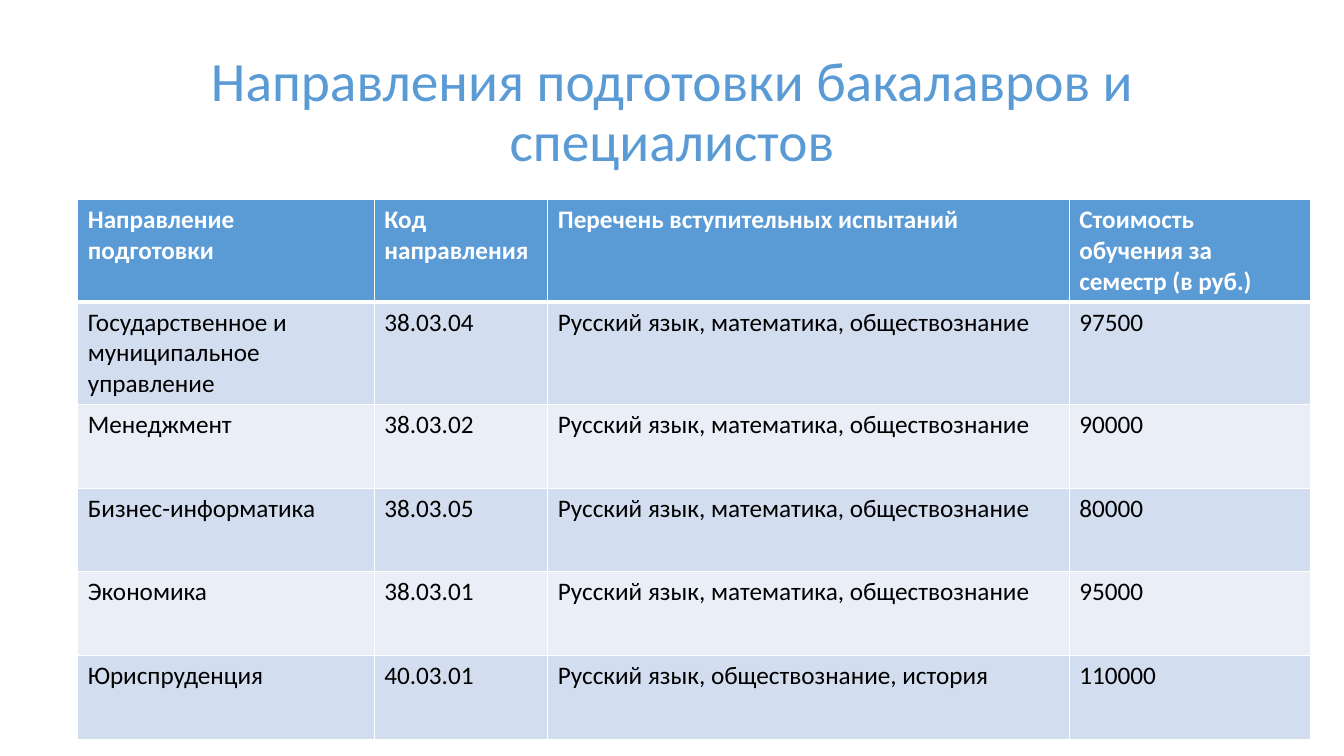
import dataclasses

import lxml.etree
import pptx
import pptx.dml.color
import pptx.enum.text
import pptx.oxml.ns
import pptx.util

Pt = pptx.util.Pt
RGBColor = pptx.dml.color.RGBColor

BLUE = RGBColor(0x5B, 0x9B, 0xD5)
DARK_BAND = RGBColor(0xD2, 0xDE, 0xEF)
LIGHT_BAND = RGBColor(0xEA, 0xEF, 0xF7)
WHITE = RGBColor(0xFF, 0xFF, 0xFF)
BLACK = RGBColor(0x00, 0x00, 0x00)

FONT = "Calibri"
COLUMN_WIDTHS = (211.8, 124, 372.4, 172.6)
ROW_HEIGHT = 59.8
HEADINGS = (
    "Направление подготовки",
    "Код направления",
    "Перечень вступительных испытаний",
    "Стоимость обучения за семестр (в руб.)",
)
MATH_EXAMS = "Русский язык, математика, обществознание"
HISTORY_EXAMS = "Русский язык, обществознание, история"


@dataclasses.dataclass(frozen=True)
class Programme:
    name: str
    code: str
    exams: str
    price: int


PROGRAMMES = (
    Programme("Государственное и муниципальное управление", "38.03.04", MATH_EXAMS, 97500),
    Programme("Менеджмент", "38.03.02", MATH_EXAMS, 90000),
    Programme("Бизнес-информатика", "38.03.05", MATH_EXAMS, 80000),
    Programme("Экономика", "38.03.01", MATH_EXAMS, 95000),
    Programme("Юриспруденция", "40.03.01", HISTORY_EXAMS, 110000),
)


def write_text(frame, text: str, *, size: float, color: RGBColor, bold: bool = False,
               align=None, line_spacing: float | None = None) -> None:
    para = frame.paragraphs[0]
    para.alignment = align
    para.line_spacing = line_spacing
    span = para.add_run()
    span.text = text
    span.font.name = FONT
    span.font.size = Pt(size)
    span.font.bold = bold
    span.font.color.rgb = color


def set_borders(cell, *, color: RGBColor, bottom: float, top: float) -> None:
    properties = cell._tc.get_or_add_tcPr()
    widths = {"lnL": 1, "lnR": 1, "lnT": top, "lnB": bottom}
    for position, (side, width) in enumerate(widths.items()):
        line = lxml.etree.Element(pptx.oxml.ns.qn(f"a:{side}"), w=str(Pt(width)))
        fill = lxml.etree.SubElement(line, pptx.oxml.ns.qn("a:solidFill"))
        lxml.etree.SubElement(fill, pptx.oxml.ns.qn("a:srgbClr"), val=str(color))
        properties.insert(position, line)


def add_title(page) -> None:
    box = page.shapes.title
    box.left, box.top, box.width, box.height = Pt(72), Pt(49), Pt(816), Pt(64)
    frame = box.text_frame
    frame.word_wrap = True
    frame.auto_size = pptx.enum.text.MSO_AUTO_SIZE.NONE
    frame.vertical_anchor = pptx.enum.text.MSO_ANCHOR.MIDDLE
    write_text(frame, "Направления подготовки бакалавров и специалистов", size=39.6,
               color=BLUE, align=pptx.enum.text.PP_ALIGN.CENTER, line_spacing=0.9)


def add_programme_table(page) -> None:
    rows = [HEADINGS] + [
        tuple(str(value) for value in dataclasses.astuple(programme))
        for programme in PROGRAMMES
    ]
    table = page.shapes.add_table(
        len(rows), len(HEADINGS), Pt(55.6), Pt(142.6),
        Pt(sum(COLUMN_WIDTHS)), Pt(ROW_HEIGHT * len(rows)),
    ).table
    for column, width in zip(table.columns, COLUMN_WIDTHS):
        column.width = Pt(width)
    for row_index, values in enumerate(rows):
        table.rows[row_index].height = Pt(ROW_HEIGHT)
        heading = row_index == 0
        band = BLUE if heading else (DARK_BAND if row_index % 2 else LIGHT_BAND)
        for column_index, text in enumerate(values):
            cell = table.cell(row_index, column_index)
            cell.fill.solid()
            cell.fill.fore_color.rgb = band
            set_borders(cell, color=WHITE, bottom=3 if heading else 1,
                        top=3 if row_index == 1 else 1)
            write_text(cell.text_frame, text, size=18, bold=heading,
                       color=WHITE if heading else BLACK)


def main() -> None:
    deck = pptx.Presentation()
    deck.slide_width, deck.slide_height = Pt(960), Pt(540)
    page = deck.slides.add_slide(deck.slide_layouts.get_by_name("Title Only"))
    add_title(page)
    add_programme_table(page)
    deck.save("out.pptx")


if __name__ == "__main__":
    main()
